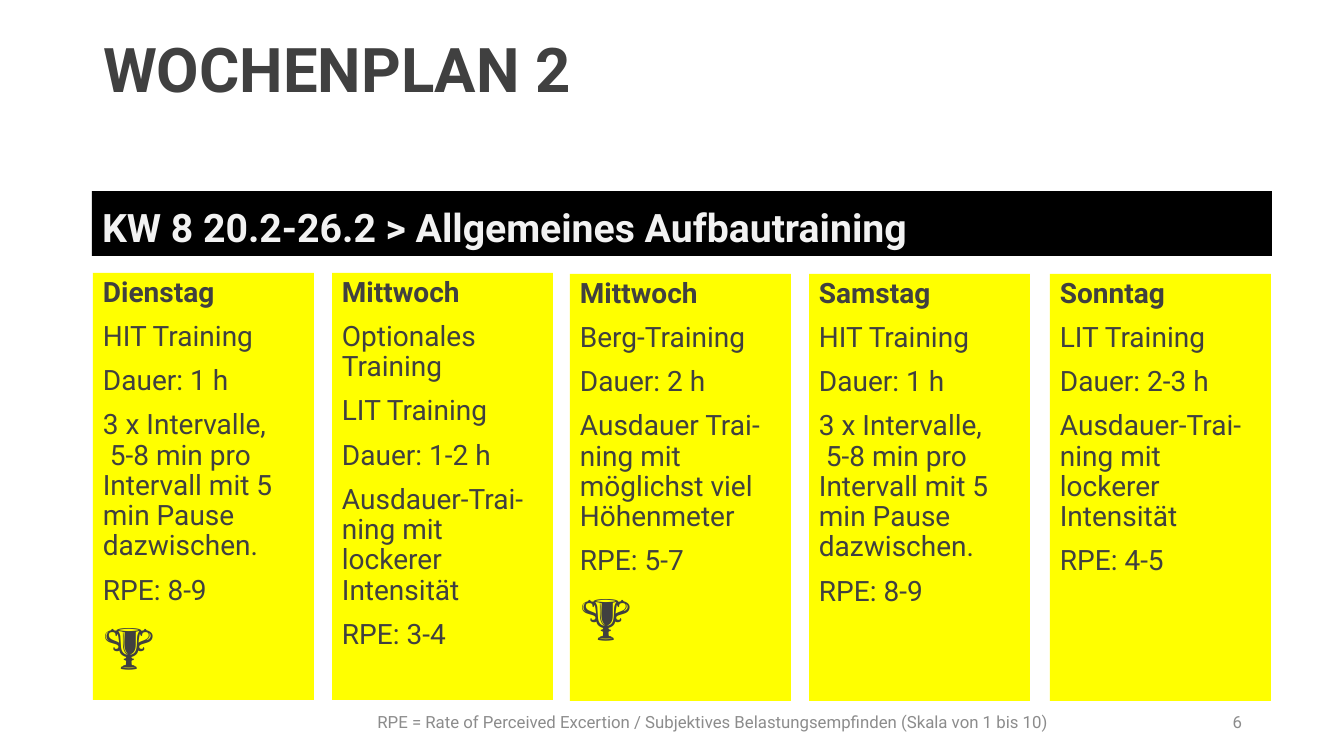
"""Build the training week plan slide with a header bar and five day columns."""
from lxml.etree import SubElement
from pptx import Presentation
from pptx.dml.color import RGBColor
from pptx.enum.shapes import MSO_SHAPE
from pptx.enum.text import MSO_ANCHOR as ANCHOR, MSO_AUTO_SIZE as AUTO, PP_ALIGN as ALIGN
from pptx.oxml.ns import qn
from pptx.util import Pt

COLORS = {"text": "404040", "bar": "000000", "bar_text": "F2F2F2",
          "day": "FFFF00", "note": "8C8C8C"}
EMU_PER_PX = 914400 / 100.8


def px(*values):
    return [round(v * EMU_PER_PX) for v in values]


def add_text(tf, text, size=20, color="text", bold=False, align=ALIGN.LEFT,
             line=0.9, before=10):
    first = not tf.paragraphs[0].runs
    p = tf.paragraphs[0] if first else tf.add_paragraph()
    p.text = text
    p.alignment = align
    p.line_spacing = line
    p.space_before = Pt(0 if first else before)
    for r in p.runs:
        r.font.name = "Roboto"
        r.font.size = Pt(size)
        r.font.bold = bold
        r.font.color.rgb = RGBColor.from_string(COLORS[color])
    return p


prs = Presentation()
prs.slide_width, prs.slide_height = px(1344, 756)
s = prs.slides.add_slide(prs.slide_layouts[1])

title, bar = s.placeholders[0], s.placeholders[1]
title.left, title.top, title.width, title.height = px(93, 9, 1010, 128)
tf = title.text_frame
tf.auto_size = AUTO.NONE
tf.vertical_anchor = ANCHOR.MIDDLE
add_text(tf, "WOCHENPLAN 2", size=44, bold=True)

bar.left, bar.top, bar.width, bar.height = px(92, 191, 1180, 65)
bar.fill.solid()
bar.fill.fore_color.rgb = RGBColor.from_string(COLORS["bar"])
tf = bar.text_frame
tf.auto_size = AUTO.NONE
tf.vertical_anchor = ANCHOR.BOTTOM
p = add_text(tf, "KW 8 20.2-26.2 > Allgemeines Aufbautraining",
             size=28, color="bar_text", bold=True)
pPr = p._p.get_or_add_pPr()
pPr.set("marL", "0")
pPr.set("indent", "0")
SubElement(pPr, qn("a:buNone"))

INTERVALS = "3 x Intervalle,\v 5-8 min pro Intervall mit 5 min Pause dazwischen."
EASY = "Ausdauer-Trai-ning mit lockerer Intensität"
TROPHY = "🏆"
days = [
    (93, 273, "Dienstag", ["HIT Training", "Dauer: 1 h", INTERVALS, "RPE: 8-9", TROPHY]),
    (332, 273, "Mittwoch", ["Optionales Training", "LIT Training", "Dauer: 1-2 h",
                            EASY, "RPE: 3-4"]),
    (570, 274, "Mittwoch", ["Berg-Training", "Dauer: 2 h",
                            "Ausdauer Trai-ning mit möglichst viel Höhenmeter",
                            "RPE: 5-7", TROPHY]),
    (809, 274, "Samstag", ["HIT Training", "Dauer: 1 h", INTERVALS, "RPE: 8-9"]),
    (1050, 274, "Sonntag", ["LIT Training", "Dauer: 2-3 h", EASY, "RPE: 4-5"]),
]
for left, top, day, lines in days:
    sp = s.shapes.add_shape(MSO_SHAPE.RECTANGLE, *px(left, top, 221, 427))
    sp.shadow.inherit = False
    sp.fill.solid()
    sp.fill.fore_color.rgb = RGBColor.from_string(COLORS["day"])
    sp.line.fill.background()
    tf = sp.text_frame
    tf.word_wrap = True
    tf.vertical_anchor = ANCHOR.TOP
    add_text(tf, day, bold=True)
    for text in lines:
        add_text(tf, text, size=40 if text == TROPHY else 20)

notes = [
    (174, 1078, ALIGN.CENTER,
     "RPE = Rate of Perceived Excertion / Subjektives Belastungsempfinden (Skala von 1 bis 10)"),
    (950, 302, ALIGN.RIGHT, "6"),
]
for left, width, align, text in notes:
    tf = s.shapes.add_textbox(*px(left, 701, width, 41)).text_frame
    tf.word_wrap = True
    tf.vertical_anchor = ANCHOR.MIDDLE
    add_text(tf, text, size=12, color="note", align=align, line=1.0)

prs.save("out.pptx")
